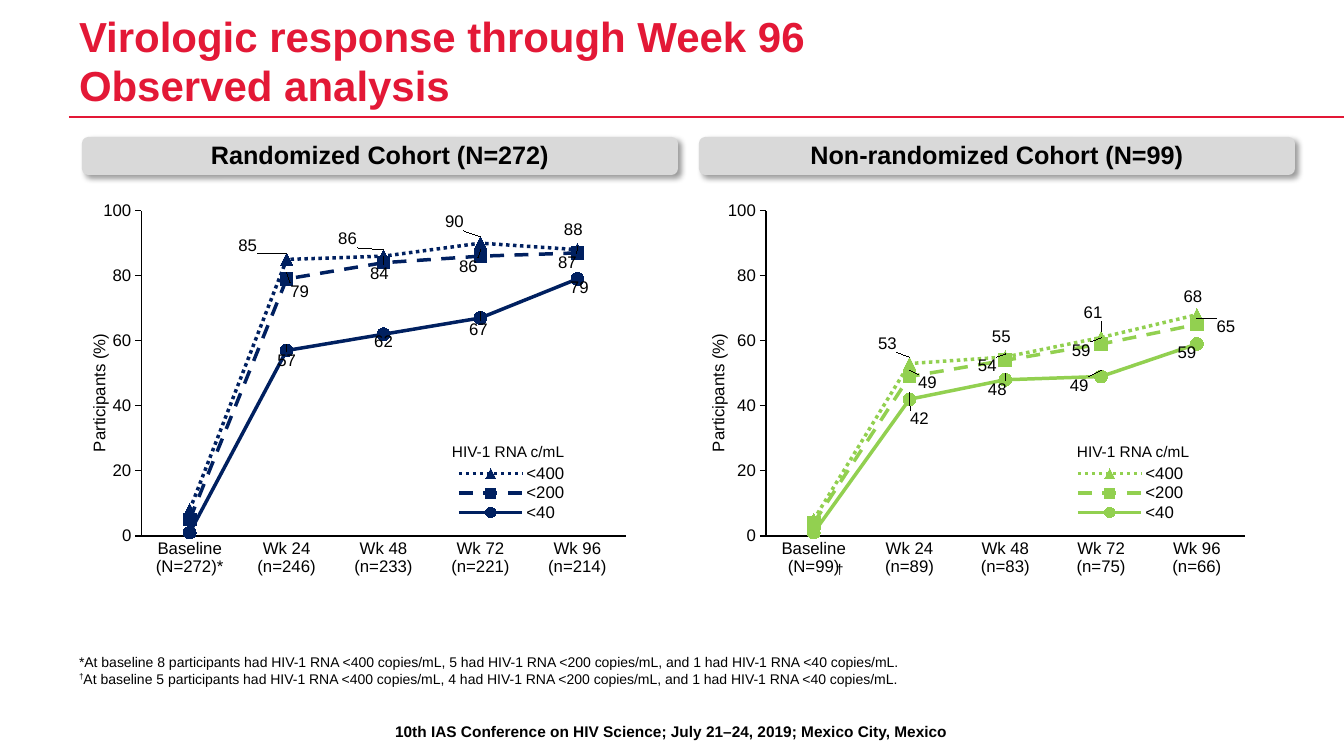
from dataclasses import dataclass
from lxml.etree import SubElement
from pptx import Presentation
from pptx.chart.data import CategoryChartData
from pptx.dml.color import RGBColor as Color
from pptx.enum.chart import XL_CHART_TYPE as ChartType, XL_LABEL_POSITION as LabelPosition
from pptx.enum.chart import XL_LEGEND_POSITION as LegendPosition, XL_MARKER_STYLE as Marker, XL_TICK_MARK as Tick
from pptx.enum.dml import MSO_LINE as Dash
from pptx.enum.shapes import MSO_CONNECTOR as Connector, MSO_SHAPE as Preset
from pptx.enum.text import MSO_ANCHOR as Anchor, MSO_AUTO_SIZE as AutoSize, PP_ALIGN as Align
from pptx.oxml.ns import qn
from pptx.util import Emu, Pt

SCALE = 914400 / 100.8
CHART_TOP, CHART_WIDTH, CHART_HEIGHT = 185, 557, 428
LABEL_RISE = 15

@dataclass(frozen=True)
class Theme:
    """Colours, font and type sizes of the page."""
    font: str = "Arial"
    black: Color = Color(0, 0, 0)
    red: Color = Color(0xE3, 0x18, 0x36)
    grey: Color = Color(0xD9, 0xD9, 0xD9)
    navy: Color = Color(0x00, 0x20, 0x60)
    green: Color = Color(0x92, 0xD0, 0x50)
    title: int = 30
    heading: int = 18
    chart: int = 12
    caption: int = 11
    note: int = 10

THEME = Theme()
LINES = [("<400", Dash.ROUND_DOT, Marker.TRIANGLE), ("<200", Dash.DASH, Marker.SQUARE),
         ("<40", Dash.SOLID, Marker.CIRCLE)]
RANDOMIZED = {
    "left": 80, "color": THEME.navy, "plot": (0.11, 0.06, 0.87, 0.76),
    "categories": ["Baseline (N=272)*", "Wk 24\n(n=246)", "Wk 48\n(n=233)", "Wk 72\n(n=221)", "Wk 96\n(n=214)"],
    "values": [(8, 85, 86, 90, 88), (5, 79, 84, 86, 87), (1, 57, 62, 67, 79)],
    "offsets": [[(-39, -9), (-36, -13), (-26, -17), (-4, -16)],
                [(13, 17), (-4, 15), (-12, 15), (-10, 14)],
                [(0, 14), (0, 12), (-2, 16), (2, 13)]],
}
NON_RANDOMIZED = {
    "left": 699, "color": THEME.green, "plot": (0.12, 0.06, 0.86, 0.76),
    "categories": ["Baseline (N=99)", "Wk 24\n(n=89)", "Wk 48\n(n=83)", "Wk 72\n(n=75)", "Wk 96\n(n=66)"],
    "values": [(5, 53, 55, 61, 68), (4, 49, 54, 59, 65), (1, 42, 48, 49, 59)],
    "offsets": [[(-22, -16), (-4, -16), (-8, -21), (-4, -14)],
                [(18, 11), (-18, 10), (-20, 11), (29, 7)],
                [(10, 24), (-8, 14), (-22, 13), (-10, 13)]],
}

def px(*lengths):
    """Turn pixel lengths into EMU."""
    return [Emu(round(length * SCALE)) for length in lengths]

def style(font, size, color=THEME.black, bold=False):
    """Format one font."""
    font.name, font.size, font.bold = THEME.font, Pt(size), bold
    font.color.rgb = color

def set_margins(frame, end=0):
    """Set the insets of a text frame, with none at the sides."""
    frame.margin_left, frame.margin_right, frame.margin_top, frame.margin_bottom = px(0, 0, end, end)

def place(parent, position, numbers, mode="edge", target=None):
    """Give a chart element a manual layout, as the child at a position."""
    layout = parent.find(qn("c:layout"))
    if layout is None:
        layout = SubElement(parent, qn("c:layout"))
        parent.insert(position, layout)
    manual = SubElement(layout, qn("c:manualLayout"))
    settings = [("layoutTarget", target), ("xMode", mode), ("yMode", mode)]
    for name, value in settings + list(zip("xywh", numbers)):
        if value is not None:
            SubElement(manual, qn(f"c:{name}")).set("val", str(value))

def add_title(page, text):
    """Fill and move the title placeholder."""
    title = page.shapes.title
    title.left, title.top, title.width, title.height = px(79, 17, 1109, 93)
    frame = title.text_frame
    frame.auto_size, frame.vertical_anchor = AutoSize.NONE, Anchor.BOTTOM
    set_margins(frame)
    para = frame.paragraphs[0]
    para.text = text
    para.alignment, para.line_spacing = Align.LEFT, Pt(35)
    for span in para.runs:
        style(span.font, THEME.title, THEME.red, True)

def add_rule(page):
    """Draw the red line under the title."""
    rule = page.shapes.add_connector(Connector.STRAIGHT, *px(69, 117, 1344, 117))
    rule.line.color.rgb, rule.line.width = THEME.red, Pt(2)
    SubElement(rule._element.spPr, qn("a:effectLst"))

def add_text(page, text, bounds, size, align=Align.LEFT, bold=False, wrap=True):
    """Add a text box with one paragraph."""
    frame = page.shapes.add_textbox(*px(*bounds)).text_frame
    frame.text, frame.word_wrap = text, wrap
    frame.paragraphs[0].alignment = align
    style(frame.paragraphs[0].runs[0].font, size, bold=bold)
    return frame

def add_footnotes(page):
    """Add the two notes about baseline."""
    note = "At baseline {} participants had HIV-1 RNA <400 copies/mL, {} had HIV-1 RNA <200 copies/mL, " \
           "and 1 had HIV-1 RNA <40 copies/mL."
    frame = add_text(page, "*" + note.format(8, 5), (79, 646, 1229, 41), THEME.note)
    frame.vertical_anchor = Anchor.BOTTOM
    set_margins(frame)
    para = frame.add_paragraph()
    para.text = "†"
    para.runs[0]._r.get_or_add_rPr().set("baseline", "30000")
    para.add_run().text = note.format(5, 4)
    for span in para.runs:
        style(span.font, THEME.note)

def add_banner(page, text, left):
    """Add a grey cohort heading with a soft shadow."""
    banner = page.shapes.add_shape(Preset.ROUNDED_RECTANGLE, *px(left, 137, 596, 38))
    banner.fill.solid()
    banner.fill.fore_color.rgb = THEME.grey
    banner.line.fill.background()
    banner.shadow.inherit = False
    shadow = SubElement(banner._element.spPr.find(qn("a:effectLst")), qn("a:outerShdw"),
                        blurRad=str(Pt(4)), dist=str(Pt(3)), dir="2700000", algn="tl", rotWithShape="0")
    SubElement(SubElement(shadow, qn("a:srgbClr"), val="000000"), qn("a:alpha"), val="40000")
    frame = banner.text_frame
    frame.text, frame.vertical_anchor = text, Anchor.MIDDLE
    set_margins(frame, 5)
    para = frame.paragraphs[0]
    para.alignment, para.line_spacing = Align.CENTER, 0.9
    style(para.runs[0].font, THEME.heading, bold=True)

def format_axes(chart):
    """Style both axes and name the value axis."""
    values, weeks = chart.value_axis, chart.category_axis
    for axis, tick in ((values, Tick.OUTSIDE), (weeks, Tick.NONE)):
        axis.has_major_gridlines = False
        axis.major_tick_mark, axis.minor_tick_mark = tick, Tick.NONE
        axis.format.line.color.rgb, axis.format.line.width = THEME.black, Pt(1)
        style(axis.tick_labels.font, THEME.chart)
    values.minimum_scale, values.maximum_scale, values.major_unit = 0, 100, 20
    values.tick_labels.number_format = "#,##0"
    values.tick_labels.number_format_is_linked = False
    title = values.axis_title
    title.text_frame.text = "Participants (%)"
    title.text_frame._txBody.find(qn("a:bodyPr")).set("rot", "-5400000")
    style(title.text_frame.paragraphs[0].runs[0].font, THEME.chart)
    place(title._element, 1, (0.01, 0.34))

def format_series(series, dash, marker, color, offsets):
    """Style one line and set its labels beside the points."""
    series.smooth = False
    line, dot = series.format.line, series.marker
    line.color.rgb, line.width, line.dash_style = color, Pt(2.5), dash
    dot.style, dot.size = marker, 9
    dot.format.fill.solid()
    dot.format.fill.fore_color.rgb = dot.format.line.color.rgb = color
    series.data_labels.show_value = False
    for index, (across, down) in enumerate(offsets, 1):
        label = series.points[index].data_label
        style(label.font, THEME.chart)
        label.position = LabelPosition.ABOVE
        shift = (round(across / CHART_WIDTH, 4), round((down + LABEL_RISE) / CHART_HEIGHT, 4))
        place(label._get_or_add_dLbl(), 1, shift, None)

def add_cohort_chart(page, cohort):
    """Add the line chart of one cohort."""
    data = CategoryChartData(number_format="0")
    data.categories = cohort["categories"]
    for (name, _, _), values in zip(LINES, cohort["values"]):
        data.add_series(name, values)
    bounds = px(cohort["left"], CHART_TOP, CHART_WIDTH, CHART_HEIGHT)
    chart = page.shapes.add_chart(ChartType.LINE_MARKERS, *bounds, data).chart
    style(chart.font, THEME.chart)
    chart.has_title, chart.has_legend = False, True
    chart.plots[0].vary_by_categories = False
    format_axes(chart)
    for series, (_, dash, marker), offsets in zip(chart.plots[0].series, LINES, cohort["offsets"]):
        format_series(series, dash, marker, cohort["color"], offsets)
    chart.legend.position, chart.legend.include_in_layout = LegendPosition.RIGHT, False
    style(chart.legend.font, THEME.chart)
    place(chart.legend._element, 1, (0.67, 0.65, 0.21, 0.14))
    place(chart._chartSpace.chart.plotArea, 0, cohort["plot"], target="inner")

def main():
    """Build the page and save the deck."""
    deck = Presentation()
    deck.slide_width, deck.slide_height = px(1344, 756)
    page = deck.slides.add_slide(deck.slide_layouts[5])
    add_title(page, "Virologic response through Week 96\nObserved analysis")
    add_rule(page)
    for cohort in (RANDOMIZED, NON_RANDOMIZED):
        add_cohort_chart(page, cohort)
    add_banner(page, "Randomized Cohort (N=272)", 82)
    add_banner(page, "Non-randomized Cohort (N=99)", 699)
    for left in (442, 1067):
        add_text(page, "HIV-1 RNA c/mL", (left, 437, 135, 29), THEME.caption, wrap=False)
    add_text(page, "†", (826, 556, 28, 27), THEME.note, wrap=False)
    add_footnotes(page)
    add_text(page, "10th IAS Conference on HIV Science; July 21–24, 2019; Mexico City, Mexico",
             (9, 717, 1325, 29), THEME.caption, Align.CENTER, True)
    deck.save("out.pptx")

if __name__ == "__main__":
    main()
